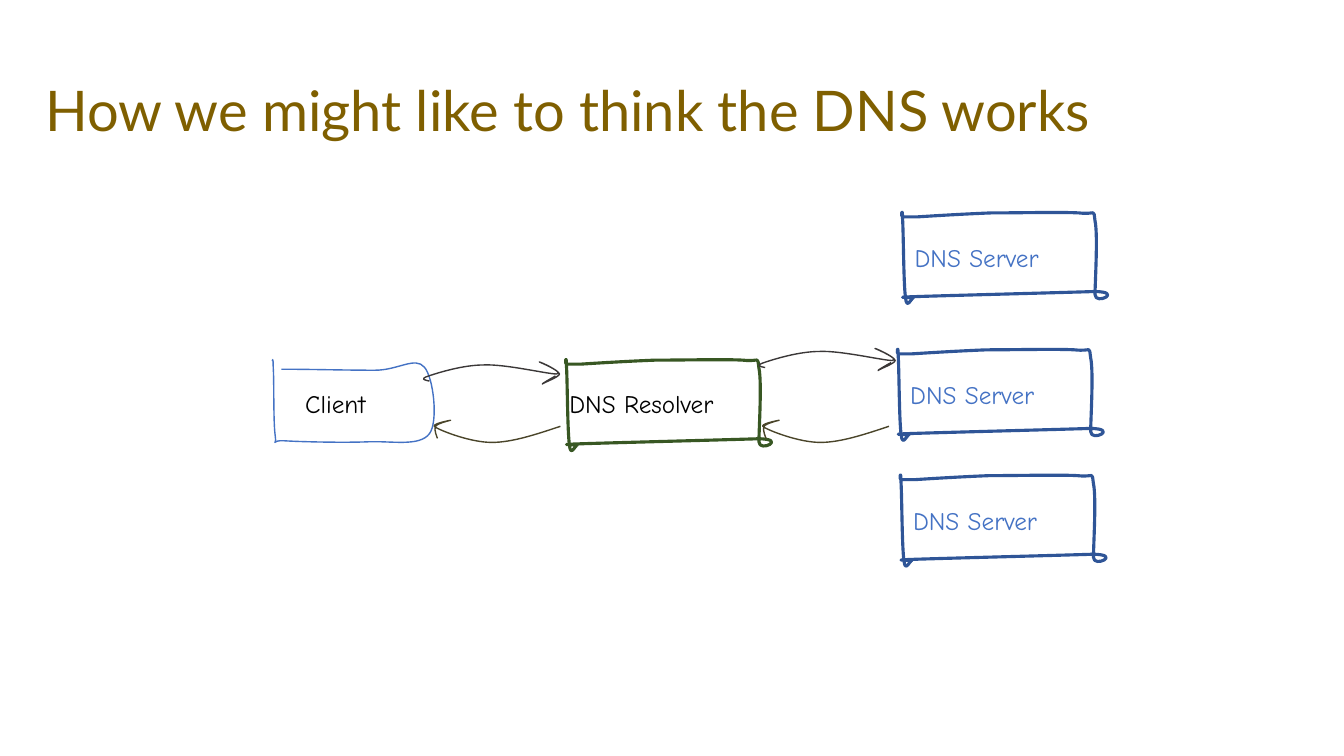
from pptx import Presentation
from pptx.dml.color import RGBColor
from pptx.enum.text import MSO_ANCHOR, PP_ALIGN
from pptx.oxml.ns import qn
from pptx.util import Cm, Pt

GOLD = RGBColor(0x7F, 0x5F, 0x00)
BLACK = RGBColor(0x00, 0x00, 0x00)
BLUE = RGBColor(0x44, 0x72, 0xC4)
DARK_BLUE = RGBColor(0x2F, 0x55, 0x97)
GREEN = RGBColor(0x38, 0x57, 0x23)
CHARCOAL = RGBColor(0x3B, 0x38, 0x38)
OLIVE = RGBColor(0x4A, 0x45, 0x2A)

OUTLINE_UNIT = Cm(0.0254)
HOST_SIZE = (204, 91)
CLIENT_SIZE = (161, 82)
REQUEST_SIZE = (135, 21)
REPLY_SIZE = (126, 21)

HOST_OUTLINE = [
    (15, 5), (30, 4), (63, 2), (89, 1), (116, 1), (159, 0), (176, 1),
    (194, 3), (190, -4), (192, 9), (195, 23), (192, 70), (192, 82),
    (192, 93), (221, 79), (191, 79), (162, 80), (45, 83), (15, 84),
    (-15, 85), (13, 85), (12, 85), (10, 85), (5, 98), (4, 85),
    (2, 72), (2, 19), (1, 6), (1, -7), (-1, 5), (1, 5),
    (4, 5), (0, 5), (15, 5),
]
CLIENT_OUTLINE = [
    (9, 10), (40, 10), (71, 11), (102, 11), (125, 11), (142, -3), (151, 8),
    (160, 18), (165, 62), (156, 74), (146, 87), (119, 81), (95, 82),
    (71, 83), (28, 82), (12, 81), (-3, 80), (5, 88), (3, 76),
    (1, 63), (2, 20), (1, 8), (1, -4), (0, 2), (0, 2),
]
REQUEST_OUTLINE = [
    (6, 19), (1, 18), (-4, 17), (5, 14), (14, 11), (39, 3), (60, 3),
    (81, 2), (123, 12), (132, 12), (141, 11), (115, 0), (115, 0),
    (116, 0), (134, 8), (135, 12), (135, 15), (118, 21), (118, 22),
    (117, 22), (124, 18), (131, 14),
]
REPLY_OUTLINE = [
    (125, 6), (101, 14), (77, 22), (57, 22), (36, 22), (8, 11), (1, 7),
    (-6, 4), (16, 0), (16, 0), (16, 0), (3, 3), (1, 6),
    (-1, 9), (3, 18), (3, 18),
]


def bend_lines(shape, outline, size):
    contour = next(shape.element.iter(qn("a:path")))
    contour.set("w", str(size[0]))
    contour.set("h", str(size[1]))
    for point, (x, y) in zip(contour.iter(qn("a:pt")), outline):
        point.set("x", str(x))
        point.set("y", str(y))
    lines = contour.findall(qn("a:lnTo"))
    for curve, second, third in zip(lines[::3], lines[1::3], lines[2::3]):
        curve.tag = qn("a:cubicBezTo")
        for line in (second, third):
            curve.append(line[0])
            contour.remove(line)


def add_sketch(slide, left, top, size, outline, color, width):
    builder = slide.shapes.build_freeform(*outline[0], scale=OUTLINE_UNIT)
    builder.add_line_segments(outline[1:], close=outline[0] == outline[-1])
    shape = builder.convert_to_shape()
    bend_lines(shape, outline, size)
    shape.left, shape.top = Cm(left), Cm(top)
    shape.width, shape.height = (length * OUTLINE_UNIT for length in size)
    shape.shadow.inherit = False
    shape.fill.background()
    shape.line.color.rgb = color
    shape.line.width = Pt(width)


def add_label(slide, left, top, width, text, color):
    label = slide.shapes.add_textbox(Cm(left), Cm(top), Cm(width), Cm(1.02))
    label.text_frame.word_wrap = True
    paragraph = label.text_frame.paragraphs[0]
    paragraph.text = text
    paragraph.font.name = "Comic Neue"
    paragraph.font.size = Pt(18)
    paragraph.font.color.rgb = color


def add_title(slide, left, top, width, height):
    title = slide.shapes.title
    title.left, title.top, title.width, title.height = Cm(left), Cm(top), Cm(width), Cm(height)
    title.text_frame.vertical_anchor = MSO_ANCHOR.MIDDLE
    title.text_frame.word_wrap = True
    paragraph = title.text_frame.paragraphs[0]
    paragraph.text = "How we might like to think the DNS works"
    paragraph.alignment = PP_ALIGN.LEFT
    paragraph.line_spacing = 0.9
    paragraph.font.name = "Lato"
    paragraph.font.size = Pt(40)
    paragraph.font.color.rgb = GOLD


def add_client(slide, left, top):
    add_sketch(slide, left, top, CLIENT_SIZE, CLIENT_OUTLINE, BLUE, 1)
    add_label(slide, left + 0.58, top + 0.61, 2.57, "Client", BLACK)


def add_resolver(slide, left, top):
    add_sketch(slide, left, top, HOST_SIZE, HOST_OUTLINE, GREEN, 2.25)
    add_label(slide, left - 0.15, top + 0.61, 5.26, "DNS Resolver", BLACK)


def add_server(slide, left, top):
    add_sketch(slide, left, top, HOST_SIZE, HOST_OUTLINE, DARK_BLUE, 2.25)
    add_label(slide, left + 0.08, top + 0.64, 4.67, "DNS Server", BLUE)


def add_exchange(slide, left, request_top, reply_left, reply_top):
    add_sketch(slide, left, request_top, REQUEST_SIZE, REQUEST_OUTLINE, CHARCOAL, 1)
    add_sketch(slide, reply_left, reply_top, REPLY_SIZE, REPLY_OUTLINE, OLIVE, 1)


def main():
    presentation = Presentation()
    presentation.slide_width = Cm(33.87)
    presentation.slide_height = Cm(19.05)
    slide = presentation.slides.add_slide(presentation.slide_layouts[5])
    add_title(slide, 0.9, 1.02, 30.63, 3.68)
    add_client(slide, 6.86, 9.05)
    add_resolver(slide, 14.25, 9.05)
    add_exchange(slide, 10.67, 9.12, 10.95, 10.59)
    add_exchange(slide, 19.13, 8.78, 19.23, 10.59)
    for left, top in ((22.61, 8.79), (22.68, 11.96), (22.72, 5.34)):
        add_server(slide, left, top)
    presentation.save("out.pptx")


if __name__ == "__main__":
    main()
